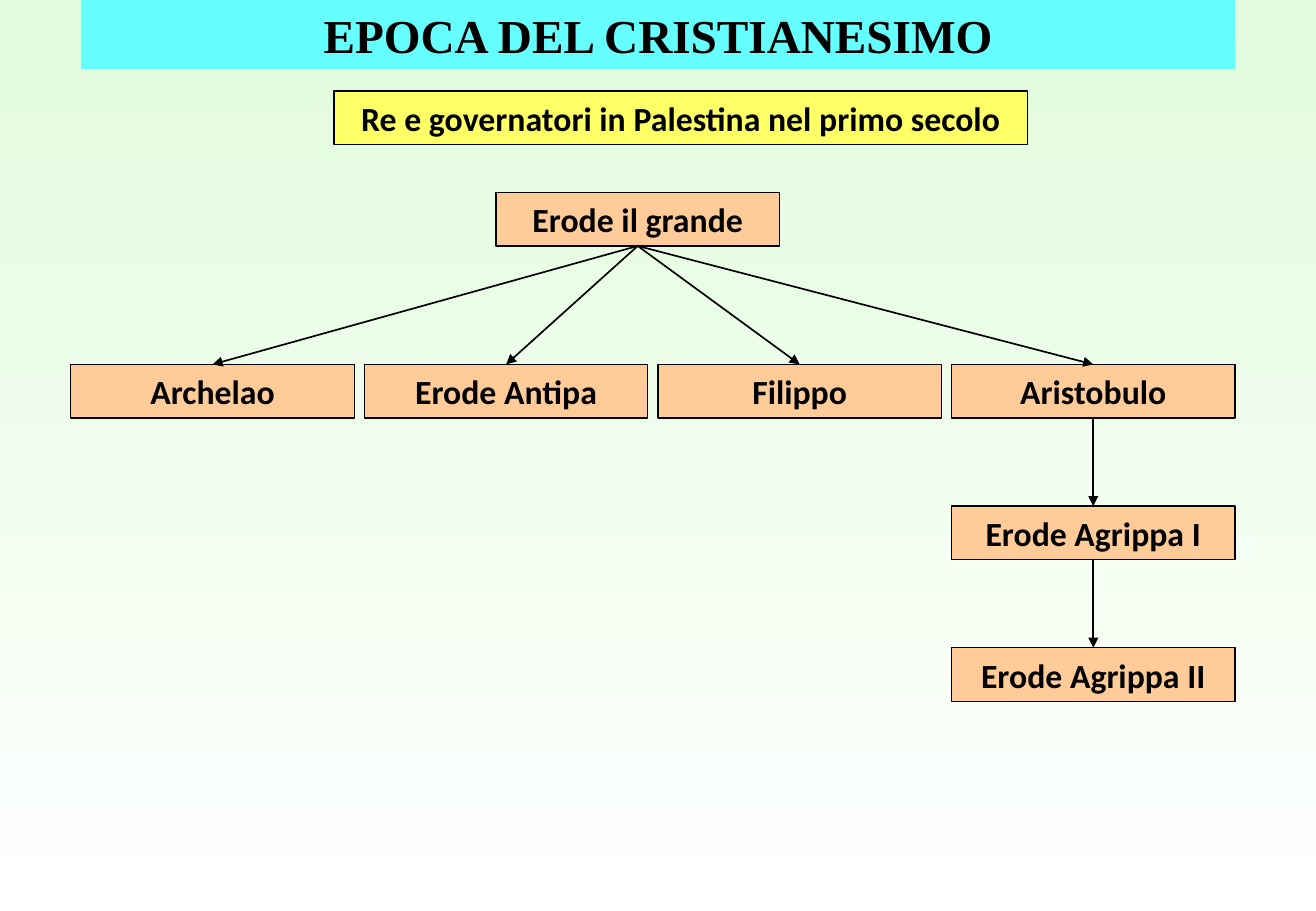
from lxml.etree import SubElement
from pptx import Presentation
from pptx.dml.color import RGBColor
from pptx.enum.shapes import MSO_CONNECTOR as Connector, MSO_SHAPE as Shape
from pptx.enum.text import MSO_ANCHOR as Anchor, MSO_AUTO_SIZE as AutoSize, PP_ALIGN as Align
from pptx.oxml.ns import qn
from pptx.util import Inches, Pt

COLORS = {"sky": "E1FCDC", "ground": "FFFFFF", "banner": "66FFFF",
          "topic": "FFFF66", "ruler": "FFCC99", "ink": "000000"}
COLUMNS, ROWS = 130, 90  # grid cells of 1/12 inch
BOX_WIDTH, BOX_HEIGHT = 28, 5.3
TOP, BOTTOM = 0, 2


def color(name):
    return RGBColor.from_string(COLORS[name])


def grid(*cells):
    return [Inches(cell / 12) for cell in cells]


class FamilyTree:
    def __init__(self, deck):
        self.slide = deck.slides.add_slide(deck.slide_layouts[5])

    def background(self):
        fill = self.slide.background.fill
        fill.gradient()
        fill.gradient_angle = 270
        for stop, name, position in zip(fill.gradient_stops, ("sky", "ground"), (0, 1)):
            stop.color.rgb = color(name)
            stop.position = position

    def label(self, shape, text, size, font):
        frame = shape.text_frame
        frame.text = text
        frame.word_wrap = True
        frame.auto_size = AutoSize.NONE
        frame.vertical_anchor = Anchor.MIDDLE
        paragraph = frame.paragraphs[0]
        paragraph.alignment = Align.CENTER
        style = paragraph.runs[0].font
        style.name, style.size, style.bold = font, Pt(size), True
        style.color.rgb = color("ink")

    def title(self, text, left, top, width, height):
        banner = self.slide.shapes.title
        banner.left, banner.top, banner.width, banner.height = grid(left, top, width, height)
        banner.fill.solid()
        banner.fill.fore_color.rgb = color("banner")
        self.label(banner, text, 28, "Times New Roman")

    def box(self, text, left, top, width=BOX_WIDTH, fill="ruler", border=0.75):
        box = self.slide.shapes.add_shape(Shape.RECTANGLE, *grid(left, top, width, BOX_HEIGHT))
        box.shadow.inherit = False
        box.fill.solid()
        box.fill.fore_color.rgb = color(fill)
        box.line.color.rgb = color("ink")
        box.line.width = Pt(border)
        self.label(box, text, 20, "Calibri")
        return box

    def descent(self, parent, child):
        """Draw an arrow from the parent's bottom to the child's top."""
        arrow = self.slide.shapes.add_connector(Connector.STRAIGHT, 0, 0, 0, 0)
        arrow.begin_connect(parent, BOTTOM)
        arrow.end_connect(child, TOP)
        arrow.line.color.rgb = color("ink")
        arrow.line.width = Pt(1)
        properties = arrow._element.spPr
        SubElement(properties.find(qn("a:ln")), qn("a:tailEnd"), type="triangle")
        SubElement(properties, qn("a:effectLst"))


def main():
    deck = Presentation()
    deck.slide_width, deck.slide_height = grid(COLUMNS, ROWS)
    tree = FamilyTree(deck)
    tree.background()
    tree.title("EPOCA DEL CRISTIANESIMO", 8, 0, 114, 6.8)
    tree.box("Re e governatori in Palestina nel primo secolo", 33, 9, 68.5, "topic", 1)

    herod = tree.box("Erode il grande", 49, 19)
    sons = [tree.box(name, 7 + 29 * column, 36) for column, name in
            enumerate(["Archelao", "Erode Antipa", "Filippo", "Aristobulo"])]
    heirs = [tree.box(name, 94, 50 + 14 * row) for row, name in
             enumerate(["Erode Agrippa I", "Erode Agrippa II"])]

    for son in sons:
        tree.descent(herod, son)
    for parent, heir in zip([sons[-1], *heirs], heirs):
        tree.descent(parent, heir)
    deck.save("out.pptx")


if __name__ == "__main__":
    main()
